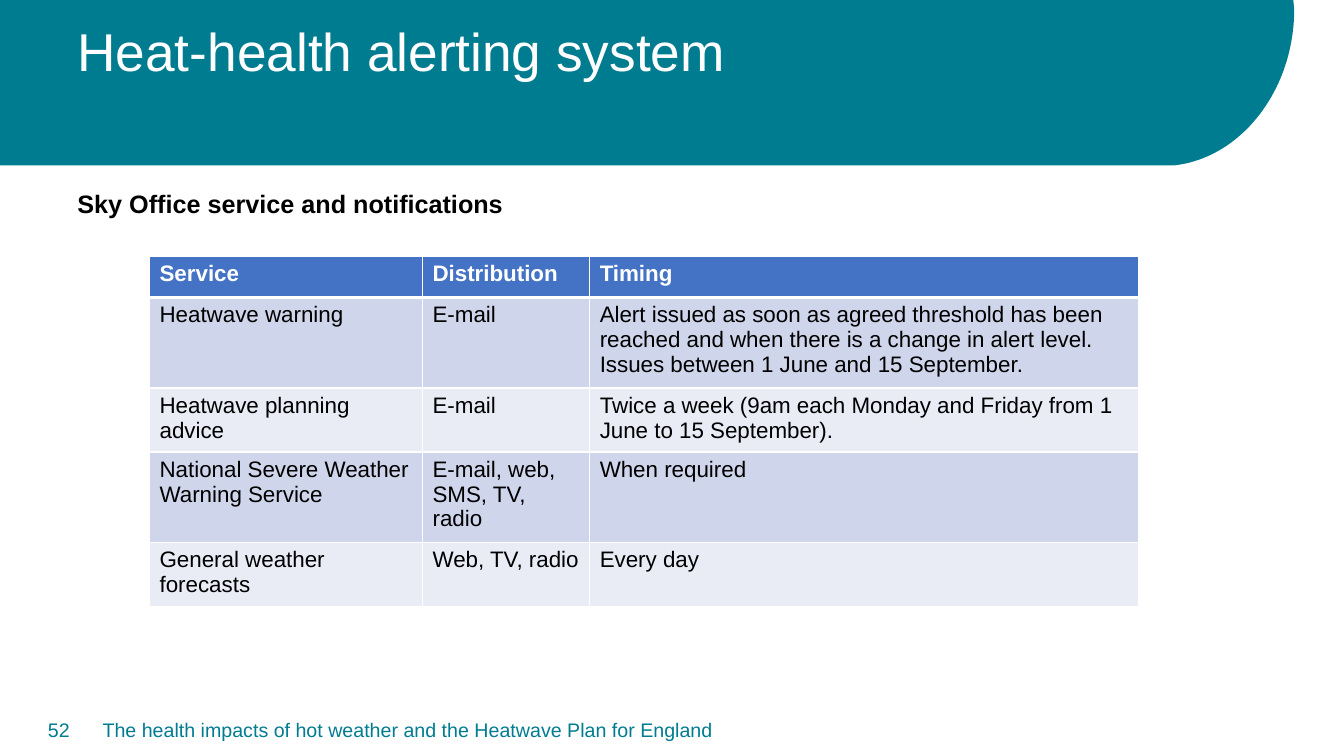
import pptx
import pptx.util
import pptx.dml.color
import pptx.enum.text
import pptx.oxml
import pptx.oxml.ns

Pt = pptx.util.Pt
Align = pptx.enum.text.PP_ALIGN
Anchor = pptx.enum.text.MSO_ANCHOR
TEAL = "007C91"


def color(code):
    return pptx.dml.color.RGBColor.from_string(code)


def label(text, left, top, width, height, size, code, wrap=True):
    """Add a one-paragraph text box; return its frame and paragraph."""
    box = slide.shapes.add_textbox(Pt(left), Pt(top), Pt(width), Pt(height))
    frame = box.text_frame
    frame.word_wrap = wrap
    para = frame.paragraphs[0]
    para.text = text
    para.font.name = "Arial"
    para.font.size = Pt(size)
    para.font.color.rgb = color(code)
    return frame, para


deck = pptx.Presentation()
deck.slide_width = Pt(960)
deck.slide_height = Pt(540)
slide = deck.slides.add_slide(deck.slide_layouts[6])

# Banner with a rounded lower right corner, traced along a Bezier curve
curve = [(924.5, 6.5), (924.5, 64.1), (887, 112.3), (839.5, 118.1)]
steps = 40
edge = []
for step in range(steps + 1):
    t = step / steps
    parts = [(1 - t) ** 3, 3 * t * (1 - t) ** 2, 3 * t ** 2 * (1 - t), t ** 3]
    edge.append(tuple(Pt(sum(w * spot[axis] for w, spot in zip(parts, curve)))
                      for axis in (0, 1)))
build = slide.shapes.build_freeform(0, 0)
build.add_line_segments([(Pt(923.8), 0)] + edge + [(Pt(830), Pt(118.1)), (0, Pt(118.1))])
banner = build.convert_to_shape()
banner.shadow.inherit = False
banner.fill.solid()
banner.fill.fore_color.rgb = color(TEAL)
banner.line.fill.background()

# Headings
frame, title = label("Heat-health alerting system", 48.2, 14.4, 790, 76, 38, "FFFFFF")
title.line_spacing = 0.9
frame, lead = label("Sky Office service and notifications", 48.2, 133.2, 320, 26.6, 18,
                    "000000", wrap=False)
lead.line_spacing = 0.9
lead.font.bold = True

# Footer
frame, footer = label("The health impacts of hot weather and the Heatwave Plan for England",
                      66.2, 507, 788, 28.8, 14, TEAL)
frame.vertical_anchor = Anchor.MIDDLE
frame, number = label("52", 10.1, 507, 46.8, 28.8, 14, TEAL)
frame.vertical_anchor = Anchor.MIDDLE
number.alignment = Align.RIGHT

# Table of services
rows = [
    ("Service", "Distribution", "Timing"),
    ("Heatwave warning", "E-mail",
     "Alert issued as soon as agreed threshold has been reached and when there is "
     "a change in alert level. Issues between 1 June and 15 September."),
    ("Heatwave planning advice", "E-mail",
     "Twice a week (9am each Monday and Friday from 1 June to 15 September)."),
    ("National Severe Weather Warning Service", "E-mail, web, SMS, TV, radio",
     "When required"),
    ("General weather forecasts", "Web, TV, radio", "Every day"),
]
widths = [195, 119.4, 392]
heights = [29.2, 64.8, 45.6, 64.8, 45.6]
table = slide.shapes.add_table(len(rows), len(widths), Pt(106.8), Pt(183.2),
                               Pt(sum(widths)), Pt(sum(heights))).table
for column, width in zip(table.columns, widths):
    column.width = Pt(width)
for r, (texts, height) in enumerate(zip(rows, heights)):
    table.rows[r].height = Pt(height)
    head = r == 0
    shade = "4472C4" if head else ("E9EBF5", "CFD5EA")[r % 2]
    for c, text in enumerate(texts):
        cell = table.cell(r, c)
        cell.text = text
        font = cell.text_frame.paragraphs[0].font
        font.name = "Arial"
        font.size = Pt(16)
        font.bold = head
        font.color.rgb = color("FFFFFF" if head else "000000")
        props = cell._tc.get_or_add_tcPr()
        for side in "LRTB":
            thick = (r, side) in ((0, "B"), (1, "T"))
            props.append(pptx.oxml.parse_xml(
                f'<a:ln{side} {pptx.oxml.ns.nsdecls("a")} w="{Pt(3 if thick else 1)}">'
                f'<a:solidFill><a:srgbClr val="FFFFFF"/></a:solidFill></a:ln{side}>'))
        cell.fill.solid()
        cell.fill.fore_color.rgb = color(shade)

deck.save("out.pptx")
